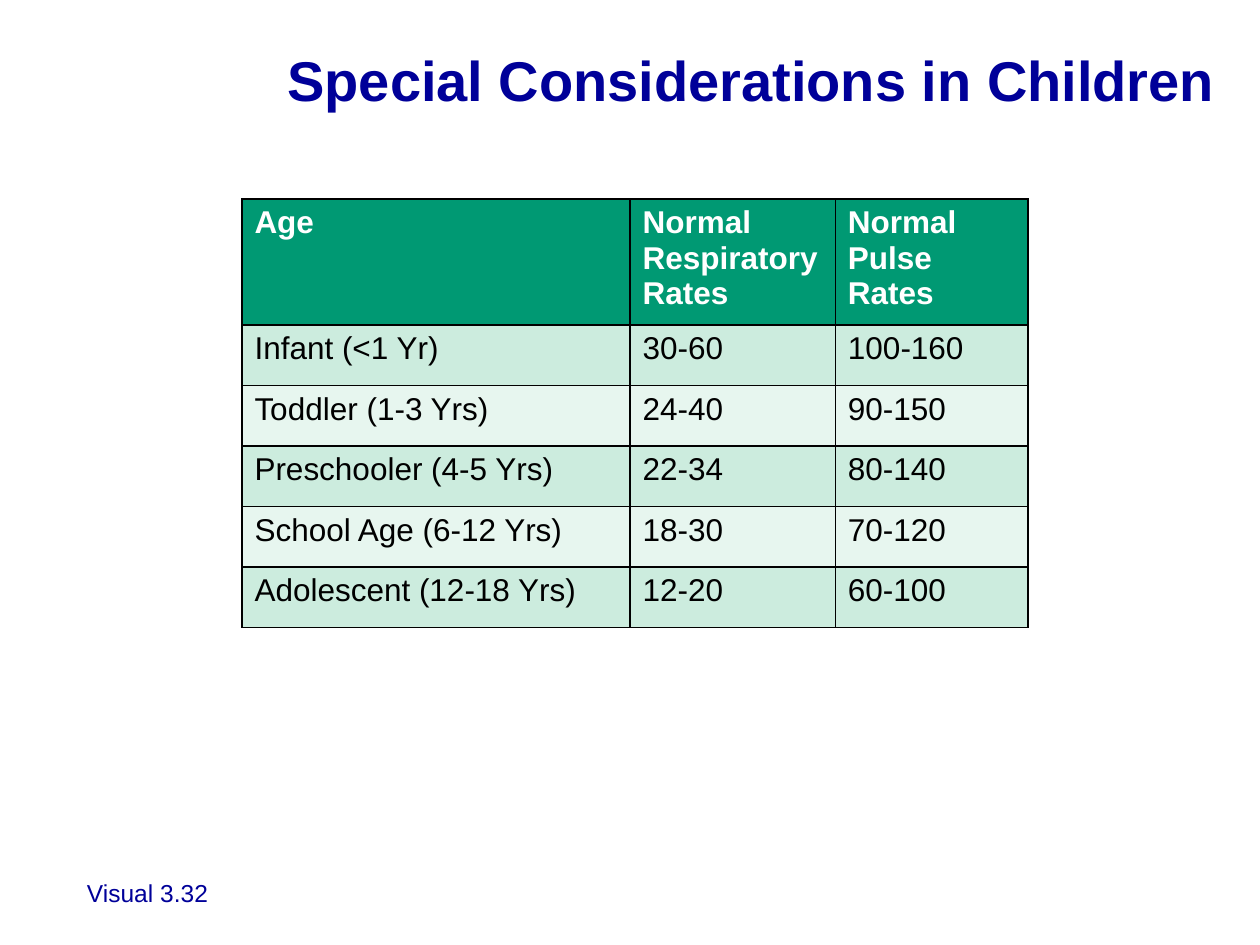
"""Build a slide with a table of normal vital signs in children."""
from lxml import etree
from pptx import Presentation
from pptx.dml.color import RGBColor
from pptx.enum.text import MSO_ANCHOR, PP_ALIGN
from pptx.oxml.ns import qn
from pptx.util import Inches, Pt

RIGHT = PP_ALIGN.RIGHT
MIDDLE = MSO_ANCHOR.MIDDLE
NAVY = RGBColor(0x00, 0x00, 0x99)
GREEN = RGBColor(0x00, 0x99, 0x73)
MINT = RGBColor(0xCC, 0xEC, 0xDE)
PALE_MINT = RGBColor(0xE7, 0xF6, 0xEF)
WHITE = RGBColor(0xFF, 0xFF, 0xFF)
BLACK = RGBColor(0x00, 0x00, 0x00)
TITLE_ONLY = 5

COLUMN_WIDTHS = (3.08, 1.63, 1.53)
HEADER_HEIGHT = 1
ROW_HEIGHT = 0.48
RATES = (
    ("Age", "Normal Respiratory Rates", "Normal Pulse Rates"),
    ("Infant (<1 Yr)", "30-60", "100-160"),
    ("Toddler (1-3 Yrs)", "24-40", "90-150"),
    ("Preschooler (4-5 Yrs)", "22-34", "80-140"),
    ("School Age (6-12 Yrs)", "18-30", "70-120"),
    ("Adolescent (12-18 Yrs)", "12-20", "60-100"),
)


def format_paragraph(paragraph, size, color, bold=False):
    font = paragraph.font
    font.name = "Arial"
    font.size = Pt(size)
    font.bold = bold
    font.color.rgb = color


def add_title(slide, text):
    title = slide.shapes.title
    title.left, title.top = Inches(2.17), Inches(0.25)
    title.width, title.height = Inches(7.58), Inches(0.75)
    frame = title.text_frame
    frame.text = text
    frame.vertical_anchor = MIDDLE
    paragraph = frame.paragraphs[0]
    paragraph.alignment = RIGHT
    format_paragraph(paragraph, 32, NAVY, bold=True)


def add_visual_number(slide, text):
    box = slide.shapes.add_textbox(Inches(-0.08), Inches(6.92), Inches(1.83), Inches(0.33))
    frame = box.text_frame
    frame.word_wrap = True
    frame.text = text
    paragraph = frame.paragraphs[0]
    paragraph.alignment = RIGHT
    format_paragraph(paragraph, 14, NAVY)


def add_borders(cell, color):
    properties = cell._tc.get_or_add_tcPr()
    for position, side in enumerate(("lnL", "lnR", "lnT", "lnB")):
        line = etree.Element(qn(f"a:{side}"), w=str(Pt(1)))
        fill = etree.SubElement(line, qn("a:solidFill"))
        etree.SubElement(fill, qn("a:srgbClr"), val=str(color))
        properties.insert(position, line)


def fill_cell(cell, text, row_index):
    is_header = row_index == 0
    cell.text = text
    cell.fill.solid()
    cell.fill.fore_color.rgb = GREEN if is_header else MINT if row_index % 2 else PALE_MINT
    format_paragraph(cell.text_frame.paragraphs[0], 18, WHITE if is_header else BLACK, is_header)
    add_borders(cell, BLACK)


def add_rates_table(slide):
    heights = [HEADER_HEIGHT] + [ROW_HEIGHT] * (len(RATES) - 1)
    frame = slide.shapes.add_table(
        len(RATES), len(COLUMN_WIDTHS), Inches(1.92), Inches(1.58),
        Inches(sum(COLUMN_WIDTHS)), Inches(sum(heights)))
    table = frame.table
    for column, width in zip(table.columns, COLUMN_WIDTHS):
        column.width = Inches(width)
    for row_index, (row, height) in enumerate(zip(table.rows, heights)):
        row.height = Inches(height)
        for cell, text in zip(row.cells, RATES[row_index]):
            fill_cell(cell, text, row_index)


def main():
    presentation = Presentation()
    presentation.slide_width, presentation.slide_height = Inches(10), Inches(7.5)
    slide = presentation.slides.add_slide(presentation.slide_layouts[TITLE_ONLY])
    add_visual_number(slide, "Visual 3.32")
    add_title(slide, "Special Considerations in Children")
    add_rates_table(slide)
    presentation.save("out.pptx")


if __name__ == "__main__":
    main()
